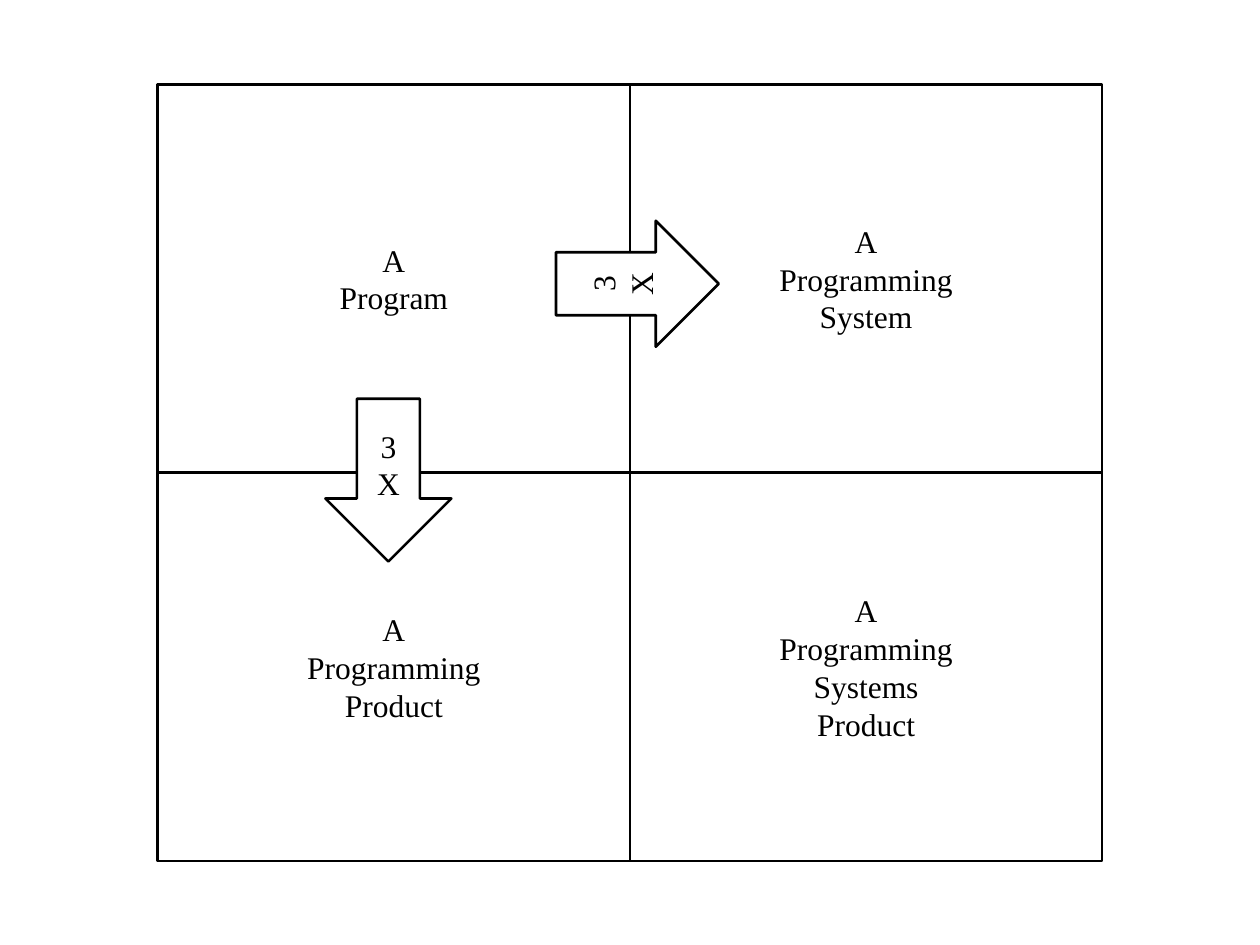
from dataclasses import dataclass

from lxml import etree
from pptx import Presentation
from pptx.dml.color import RGBColor
from pptx.enum.shapes import MSO_SHAPE
from pptx.enum.text import MSO_ANCHOR, PP_ALIGN
from pptx.oxml.ns import qn
from pptx.shapes.autoshape import Shape
from pptx.slide import Slide
from pptx.util import Cm, Pt

RECTANGLE = MSO_SHAPE.RECTANGLE
DOWN_ARROW = MSO_SHAPE.DOWN_ARROW
MIDDLE = MSO_ANCHOR.MIDDLE
CENTER = PP_ALIGN.CENTER

BLACK = "000000"
WHITE = "FFFFFF"
FONT_NAME = "Times New Roman"
GRID_LEFT, GRID_TOP = 3.18, 1.7
CELL_WIDTH, CELL_HEIGHT = 9.52, 7.83
ARROW_WIDTH, ARROW_HEIGHT = 2.54, 3.28
CELL_OPACITY = 43


@dataclass(frozen=True)
class Quadrant:
    column: int
    row: int
    lines: tuple[str, ...]


@dataclass(frozen=True)
class Arrow:
    left: float
    top: float
    rotation: float


QUADRANTS = (
    Quadrant(0, 0, ("A", "Program")),
    Quadrant(1, 0, ("A", "Programming", "System")),
    Quadrant(0, 1, ("A", "Programming", "Product")),
    Quadrant(1, 1, ("A", "Programming", "Systems", "Product")),
)
ARROWS = (Arrow(6.56, 8.04, 0), Arrow(11.58, 4.08, 270))


def color(value: str) -> RGBColor:
    return RGBColor.from_string(value)


def add_labelled_shape(
    slide: Slide,
    kind: MSO_SHAPE,
    left: float,
    top: float,
    width: float,
    height: float,
    lines: tuple[str, ...],
) -> Shape:
    shape = slide.shapes.add_shape(kind, Cm(left), Cm(top), Cm(width), Cm(height))
    shape.shadow.inherit = False
    shape.fill.solid()
    shape.fill.fore_color.rgb = color(WHITE)
    shape.line.color.rgb = color(BLACK)
    shape.line.width = Pt(1.5)
    frame = shape.text_frame
    frame.word_wrap = True
    frame.vertical_anchor = MIDDLE
    frame.text = "\n".join(lines)
    for paragraph in frame.paragraphs:
        paragraph.alignment = CENTER
        paragraph.font.name = FONT_NAME
        paragraph.font.size = Pt(18)
        paragraph.font.color.rgb = color(BLACK)
    return shape


def set_fill_opacity(shape: Shape, percent: int) -> None:
    fill_color = shape.element.spPr.find(qn("a:solidFill")).find(qn("a:srgbClr"))
    etree.SubElement(fill_color, qn("a:alpha")).set("val", str(percent * 1000))


def add_quadrant(slide: Slide, quadrant: Quadrant) -> None:
    left = GRID_LEFT + quadrant.column * CELL_WIDTH
    top = GRID_TOP + quadrant.row * CELL_HEIGHT
    shape = add_labelled_shape(
        slide, RECTANGLE, left, top, CELL_WIDTH, CELL_HEIGHT, quadrant.lines
    )
    set_fill_opacity(shape, CELL_OPACITY)


def add_arrow(slide: Slide, arrow: Arrow) -> None:
    shape = add_labelled_shape(
        slide, DOWN_ARROW, arrow.left, arrow.top, ARROW_WIDTH, ARROW_HEIGHT, ("3X",)
    )
    shape.rotation = arrow.rotation


def main() -> None:
    presentation = Presentation()
    presentation.slide_width = Cm(25.4)
    presentation.slide_height = Cm(19.05)
    slide = presentation.slides.add_slide(presentation.slide_layouts[6])
    for quadrant in QUADRANTS:
        add_quadrant(slide, quadrant)
    for arrow in ARROWS:
        add_arrow(slide, arrow)
    presentation.save("out.pptx")


if __name__ == "__main__":
    main()
